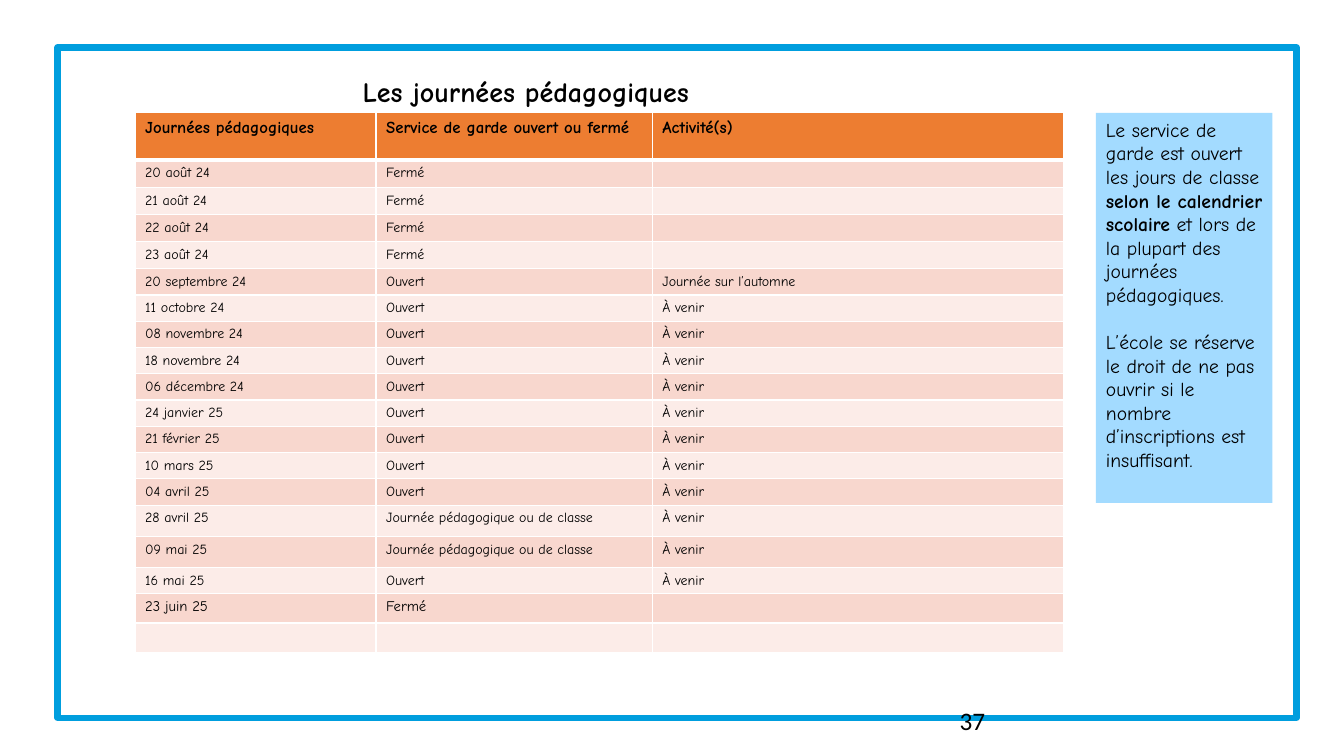
from lxml.etree import SubElement as Sub
from pptx import Presentation as Deck
from pptx.dml.color import RGBColor as Rgb
from pptx.enum.shapes import MSO_SHAPE as Form
from pptx.enum.text import MSO_ANCHOR as Anchor, PP_ALIGN as Align
from pptx.oxml import parse_xml
from pptx.oxml.ns import nsdecls, qn
from pptx.util import Pt

PX = 9144
FONT = "Comic Neue"
HUE = {"frame": "009EDE", "head": "ED7D31", "odd": "F8D7CE", "even": "FCECE8",
       "note": "A3DBFF", "ink": "000000", "rule": "FFFFFF"}
COLS = [239, 274, 408]
HIGH = [47] + [26] * 13 + [31, 31, 26, 29, 29]
HEAD = ("Journées pédagogiques", "Service de garde ouvert ou fermé", "Activité(s)")
CLASS = "Journée pédagogique ou de classe"
SOON = "À venir"
DAYS = [
    *[(f"{day} août 24", "Fermé", "") for day in range(20, 24)],
    ("20 septembre 24", "Ouvert", "Journée sur l’automne"),
    *[(day, "Ouvert", SOON) for day in (
        "11 octobre 24", "08 novembre 24", "18 novembre 24", "06 décembre 24",
        "24 janvier 25", "21 février 25", "10 mars 25", "04 avril 25")],
    ("28 avril 25", CLASS, SOON),
    ("09 mai 25", CLASS, SOON),
    ("16 mai 25", "Ouvert", SOON),
    ("23 juin 25", "Fermé", ""),
    ("", "", ""),
]
NOTE = [
    [("Le service de garde est ouvert les jours de classe ", False),
     ("selon le calendrier scolaire", True),
     (" et lors de la plupart des journées pédagogiques.", False)],
    [("L’école se réserve le droit de ne pas ouvrir si le nombre "
      "d’inscriptions est insuffisant.", False)],
]


def scale(*box):
    """Turn px lengths into EMU."""
    return [n * PX for n in box]


def paint(fill, hue):
    """Give a fill one solid colour."""
    fill.solid()
    fill.fore_color.rgb = Rgb.from_string(HUE[hue])


def write(frame, text, size, font=FONT, bold=False, align=Align.LEFT,
          anchor=Anchor.TOP, gap=0):
    """Fill a text frame from a string or from paragraphs of (text, bold) runs."""
    frame.word_wrap = True
    frame.vertical_anchor = anchor
    paras = [[(text, bold)]] if isinstance(text, str) else text
    for i, runs in enumerate(paras):
        para = frame.add_paragraph() if i else frame.paragraphs[0]
        para.alignment = align
        para.space_before = Pt(gap if i else 0)
        for words, heavy in runs:
            if not words:
                Sub(para._p, qn("a:endParaRPr"), sz=str(int(size * 100)))
                continue
            run = para.add_run()
            run.text = words
            run.font.name, run.font.size, run.font.bold = font, Pt(size), heavy
            run.font.color.rgb = Rgb.from_string(HUE["ink"])


def label(slide, box, text, size, **look):
    """Place a text box."""
    write(slide.shapes.add_textbox(*scale(*box)).text_frame, text, size, **look)


def block(slide, box):
    """Place a plain rectangle."""
    rect = slide.shapes.add_shape(Form.RECTANGLE, *scale(*box))
    rect.shadow.inherit = False
    return rect


def border(slide, box):
    """Draw the outline around the slide."""
    rect = block(slide, box)
    rect.fill.background()
    rect.line.color.rgb = Rgb.from_string(HUE["frame"])
    rect.line.width = Pt(4.5)


def edge(cell, row):
    """Rule the four sides of a cell, heavier under the heading."""
    wide = {"L": 1, "R": 1, "T": 3 if row == 1 else 1, "B": 1 if row else 3}
    for i, (side, width) in enumerate(wide.items()):
        cell._tc.get_or_add_tcPr().insert(i, parse_xml(
            f'<a:ln{side} {nsdecls("a")} w="{Pt(width)}"><a:solidFill>'
            f'<a:srgbClr val="{HUE["rule"]}"/></a:solidFill></a:ln{side}>'))


def grid(slide, left, top):
    """Build the table of days at a corner."""
    data = [HEAD, *DAYS]
    box = scale(left, top, sum(COLS), sum(HIGH))
    table = slide.shapes.add_table(len(data), len(COLS), *box).table
    for col, width in zip(table.columns, scale(*COLS)):
        col.width = width
    for y, (row, high) in enumerate(zip(data, scale(*HIGH))):
        table.rows[y].height = high
        hue = ("odd" if y % 2 else "even") if y else "head"
        size = 10.5 if y > 16 else 10 if y else 12
        for x, text in enumerate(row):
            cell = table.cell(y, x)
            paint(cell.fill, hue)
            edge(cell, y)
            write(cell.text_frame, text, size if text else 10, bold=not y)


def aside(slide, box):
    """Place the note on opening days."""
    rect = block(slide, box)
    paint(rect.fill, "note")
    rect.line.fill.background()
    write(rect.text_frame, NOTE, 14, gap=17)


def main():
    """Build the slide and save it."""
    deck = Deck()
    deck.slide_width, deck.slide_height = scale(1333, 750)
    slide = deck.slides.add_slide(deck.slide_layouts[6])
    border(slide, (57, 47, 1229, 665))
    grid(slide, 134, 112)
    label(slide, (56, 35, 931, 77), "Les journées pédagogiques", 20, bold=True,
          align=Align.CENTER, anchor=Anchor.BOTTOM)
    aside(slide, (1087, 112, 175, 387))
    label(slide, (942, 695, 300, 40), "37", 18, font="Calibri", anchor=Anchor.MIDDLE)
    deck.save("out.pptx")


if __name__ == "__main__":
    main()
